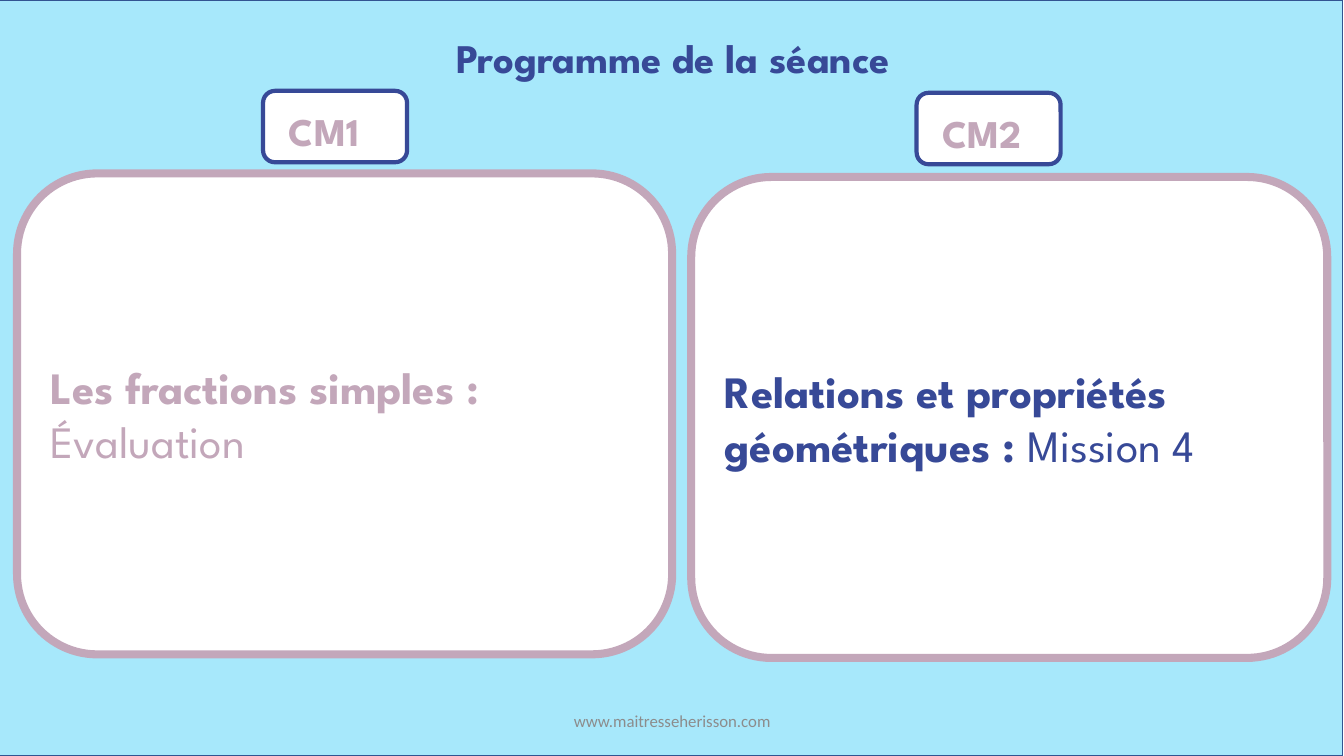
from pptx import Presentation
from pptx.dml.color import RGBColor
from pptx.enum.shapes import MSO_SHAPE
from pptx.enum.text import MSO_ANCHOR, PP_ALIGN
from pptx.util import Cm, Pt

RECTANGLE = MSO_SHAPE.RECTANGLE
ROUNDED = MSO_SHAPE.ROUNDED_RECTANGLE
TOP, MIDDLE = MSO_ANCHOR.TOP, MSO_ANCHOR.MIDDLE
LEFT, CENTER = PP_ALIGN.LEFT, PP_ALIGN.CENTER
WIDTH, HEIGHT = 33.87, 19.05


def color(value):
    return RGBColor.from_string(value)


class LessonSlide:
    heading_font = "League Spartan"
    footer_font = "Calibri"
    sky, white = "A7E8FB", "FFFFFF"
    navy, mauve = "374997", "C3A7BA"
    border, gray = "325491", "8C8C8C"

    def __init__(self, deck):
        self.page = deck.slides.add_slide(deck.slide_layouts[5])

    def fill_text(self, box, lines, size, ink, align=LEFT, anchor=TOP, font=heading_font):
        frame = box.text_frame
        frame.word_wrap = True
        frame.vertical_anchor = anchor
        for index, line in enumerate(lines):
            para = frame.add_paragraph() if index else frame.paragraphs[0]
            para.alignment = align
            for text, bold in line:
                span = para.add_run()
                span.text = text
                span.font.name = font
                span.font.size = Pt(size)
                span.font.bold = bold
                span.font.color.rgb = color(ink)

    def shape(self, kind, place, fill, line, weight):
        box = self.page.shapes.add_shape(kind, *map(Cm, place))
        box.shadow.inherit = False
        box.fill.solid()
        box.fill.fore_color.rgb = color(fill)
        box.line.color.rgb = color(line)
        box.line.width = Pt(weight)
        return box

    def text(self, place, *content, **style):
        box = self.page.shapes.add_textbox(*map(Cm, place))
        self.fill_text(box, *content, **style)

    def backdrop(self):
        box = self.shape(RECTANGLE, (-0.03, 0, WIDTH, HEIGHT), self.sky, self.border, 1)
        self.page.shapes.title.element.addprevious(box.element)

    def title(self, text):
        box = self.page.shapes.title
        box.left, box.top, box.width, box.height = map(Cm, (0.03, 0.69, WIDTH, 1.5))
        self.fill_text(box, [[(text, True)]], 29, self.navy, align=CENTER)

    def level(self, left, top, name):
        self.shape(ROUNDED, (left, top, 3.63, 1.8), self.white, self.navy, 3)
        self.text((left + 0.4, top + 0.28, 2.79, 1.45), [[(name, True)]], 28, self.mauve)

    def panel(self, left, top, width, lines, ink):
        box = self.shape(ROUNDED, (left, top, width, 12.12), self.white, self.mauve, 5.75)
        self.fill_text(box, lines, 32, ink, anchor=MIDDLE)

    def footer(self, text):
        self.text((11.23, 17.65, 11.43, 1.02), [[(text, False)]], 12, self.gray,
                  align=CENTER, anchor=MIDDLE, font=self.footer_font)


def main():
    deck = Presentation()
    deck.slide_width, deck.slide_height = Cm(WIDTH), Cm(HEIGHT)
    lesson = LessonSlide(deck)
    lesson.backdrop()
    lesson.title("Programme de la séance")
    lesson.level(6.63, 2.29, "CM1")
    lesson.panel(0.43, 4.37, 16.51,
                 [[("Les fractions simples :", True)], [("Évaluation", False)]],
                 lesson.mauve)
    lesson.level(23.1, 2.34, "CM2")
    lesson.footer("www.maitresseherisson.com")
    lesson.panel(17.42, 4.46, 16.03,
                 [[("Relations et propriétés géométriques : ", True), ("Mission 4", False)]],
                 lesson.navy)
    deck.save("out.pptx")


if __name__ == "__main__":
    main()
